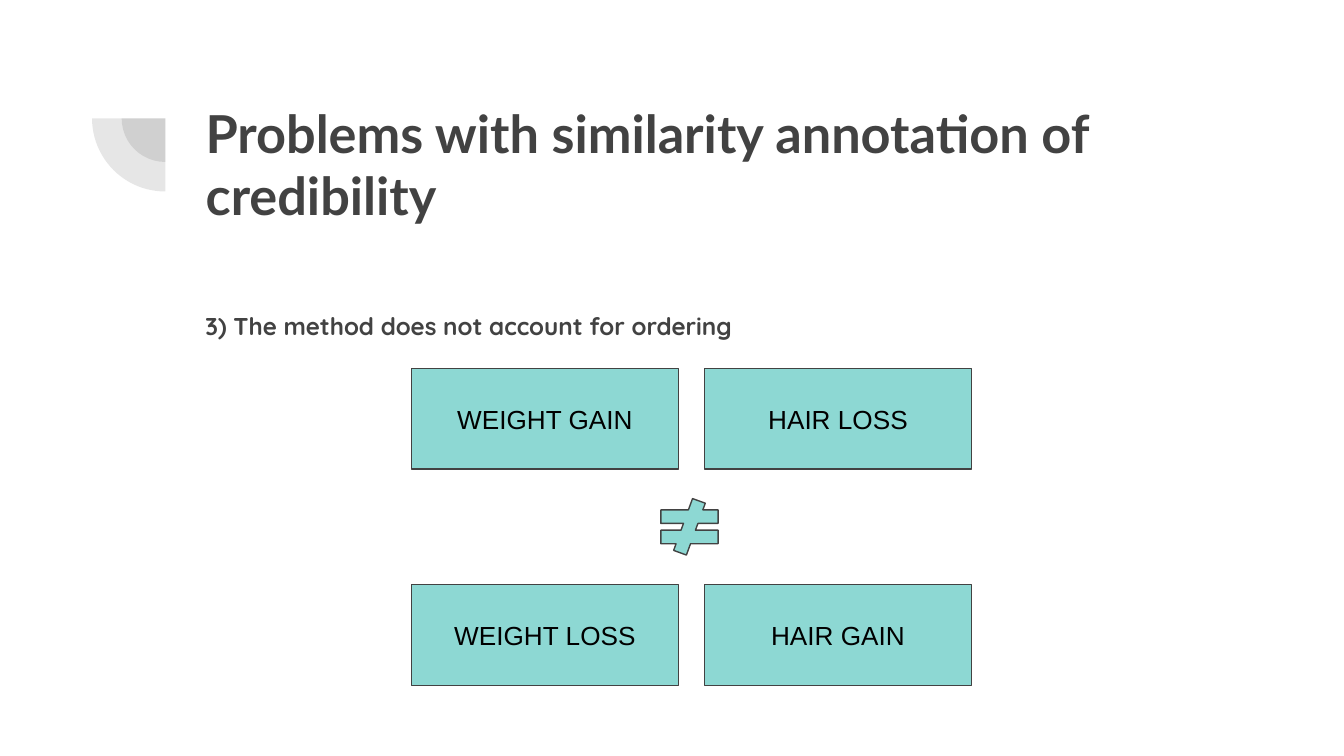
from lxml import etree
from pptx import Presentation
from pptx.dml.color import RGBColor
from pptx.enum.shapes import MSO_SHAPE
from pptx.enum.text import MSO_ANCHOR, MSO_AUTO_SIZE, PP_ALIGN
from pptx.oxml.ns import qn
from pptx.util import Inches, Pt

RECT, PIE, UNEQUAL = MSO_SHAPE.RECTANGLE, MSO_SHAPE.PIE, MSO_SHAPE.MATH_NOT_EQUAL
TOP, MIDDLE = MSO_ANCHOR.TOP, MSO_ANCHOR.MIDDLE
LEFT, CENTER = PP_ALIGN.LEFT, PP_ALIGN.CENTER

COLORS = {"ink": "424242", "teal": "8DD8D3", "black": "000000"}

TITLE = "Problems with similarity annotation of credibility"
POINT = "3) The method does not account for ordering"
PAIRS = [("WEIGHT GAIN", "HAIR LOSS"), ("WEIGHT LOSS", "HAIR GAIN")]

GRID_X, GRID_Y = 3.06, 2.74
STEP_X, STEP_Y = 2.18, 1.61
BOX_W, BOX_H = 1.99, 0.75
PIE_X, PIE_Y = 1.23, 0.88
PIE_SIZES = [0.65, 1.09]


def color(name):
    return RGBColor.from_string(COLORS[name])


def place(shape, x, y, w, h):
    shape.left, shape.top = Inches(x), Inches(y)
    shape.width, shape.height = Inches(w), Inches(h)


def write(shape, text, size, font="Arial", ink="ink", bold=False,
          align=LEFT, anchor=TOP, spacing=1.0):
    frame = shape.text_frame
    frame.word_wrap = True
    frame.auto_size = MSO_AUTO_SIZE.NONE
    frame.vertical_anchor = anchor
    frame.margin_left = frame.margin_right = Inches(0.1)
    frame.margin_top = frame.margin_bottom = Inches(0.1)
    para = frame.paragraphs[0]
    para.alignment, para.line_spacing = align, spacing
    run = para.add_run()
    run.text = text
    run.font.name, run.font.size, run.font.bold = font, Pt(size), bold
    run.font.color.rgb = color(ink)


def draw(slide, kind, x, y, w, h, fill="teal", line="ink"):
    shape = slide.shapes.add_shape(kind, Inches(x), Inches(y), Inches(w), Inches(h))
    shape.shadow.inherit = False
    shape.fill.solid()
    shape.fill.fore_color.rgb = color(fill)
    if line:
        shape.line.color.rgb = color(line)
        shape.line.width = Pt(0.75)
    else:
        shape.line.fill.background()
    return shape


def adjust(shape, *values):
    for i, value in enumerate(values):
        shape.adjustments[i] = value


def fade(shape, percent):
    """Set the opacity of a solid fill."""
    tone = shape.element.spPr.find(qn("a:solidFill"))[0]
    etree.SubElement(tone, qn("a:alpha"), val=str(percent * 1000))


def main():
    deck = Presentation()
    deck.slide_width = Inches(10)
    deck.slide_height = deck.slide_width * 9 // 16
    slide = deck.slides.add_slide(deck.slide_layouts[5])

    for size in PIE_SIZES:
        pie = draw(slide, PIE, PIE_X - size / 2, PIE_Y - size / 2, size, size,
                   fill="ink", line=None)
        adjust(pie, 108, 162)
        pie.rotation = 270
        fade(pie, 13)

    title = slide.shapes.title
    place(title, 1.43, 0.65, 7.69, 1.09)
    write(title, TITLE, 28, font="Lato", bold=True)

    body = slide.shapes.add_textbox(0, 0, 0, 0)
    place(body, 1.43, 2.18, 7.69, 2.78)
    write(body, POINT, 13, font="Quicksand", bold=True, spacing=1.15)

    for row, pair in enumerate(PAIRS):
        for col, label in enumerate(pair):
            box = draw(slide, RECT, GRID_X + col * STEP_X, GRID_Y + row * STEP_Y,
                       BOX_W, BOX_H)
            write(box, label, 14, ink="black", align=CENTER, anchor=MIDDLE)

    sign = draw(slide, UNEQUAL, 4.84, 3.71, 0.58, 0.42)
    adjust(sign, 0.24, 66, 0.12)

    deck.save("out.pptx")


if __name__ == "__main__":
    main()
